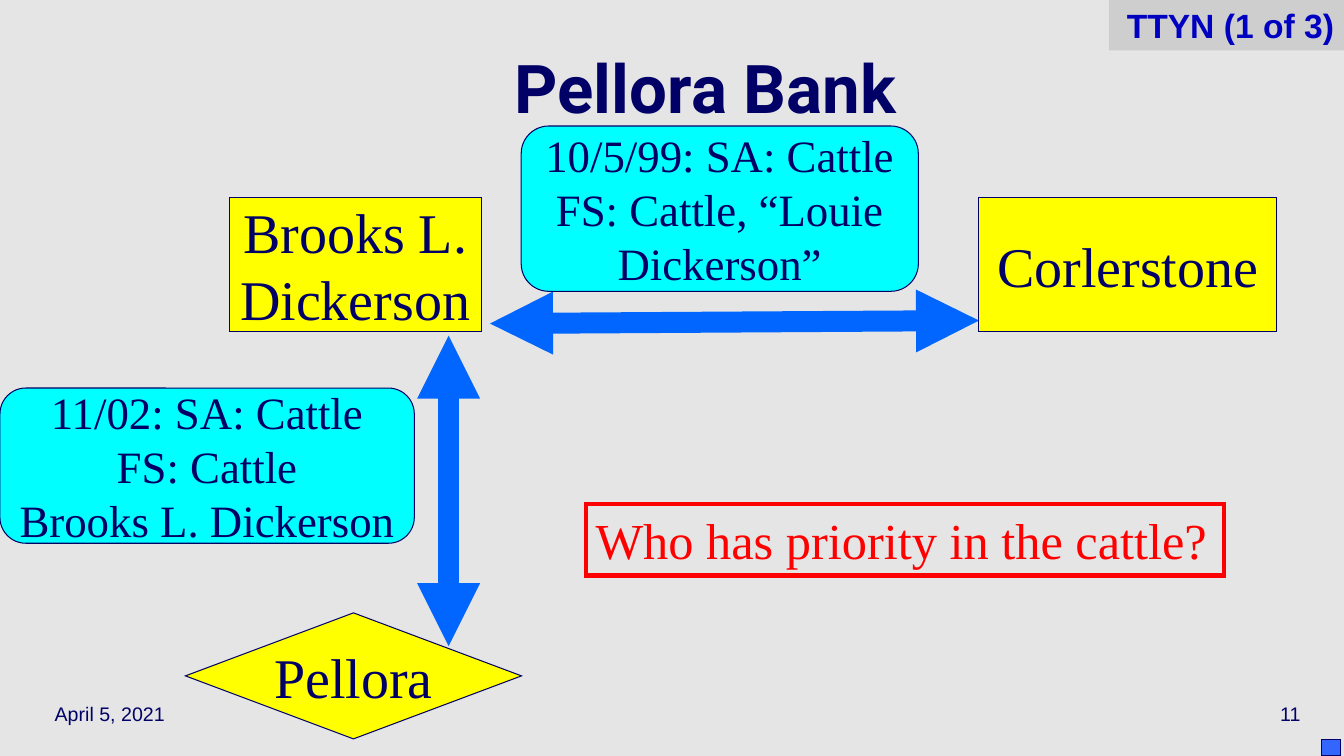
from dataclasses import dataclass

from lxml.etree import SubElement as Sub
from pptx import Presentation
from pptx.dml.color import RGBColor as Rgb
from pptx.enum.shapes import MSO_CONNECTOR as Conn, MSO_SHAPE as Form
from pptx.enum.text import MSO_ANCHOR as Anchor, PP_ALIGN as Align
from pptx.oxml.ns import qn
from pptx.shapes.autoshape import Shape
from pptx.slide import Slide
from pptx.util import Inches, Length, Pt

WIDE, HIGH = 13.33, 7.5
HUES = {
    "back": "E5E5E5", "tag": "CECECE", "navy": "000066", "royal": "0000C0",
    "yellow": "FFFF00", "cyan": "00FFFF", "blue": "0066FF", "mark": "3366FF",
    "red": "FF0000",
}
SERIF, SANS, HEAD = "Times New Roman", "Arial", "Roboto"


@dataclass(frozen=True)
class Area:
    left: float
    top: float
    width: float
    height: float


@dataclass(frozen=True)
class Node:
    form: Form
    area: Area
    fill: str
    text: str
    size: int
    wrap: bool = True


@dataclass(frozen=True)
class Arrow:
    left: float
    top: float
    right: float
    low: float


@dataclass(frozen=True)
class Label:
    area: Area
    text: str
    size: int
    font: str = SANS
    bold: bool = False
    align: Align = Align.LEFT
    wrap: bool = False
    space: float = 1.0


NODES = [
    Node(Form.FLOWCHART_PROCESS, Area(17.05, 26.13, 18.75, 17.78),
         "yellow", "Brooks L. Dickerson", 40),
    Node(Form.FLOWCHART_DECISION, Area(13.8, 81.07, 25, 16.67),
         "yellow", "Pellora", 40, wrap=False),
    Node(Form.FLOWCHART_ALTERNATE_PROCESS, Area(0, 51.33, 30.83, 20.53),
         "cyan", "11/02: SA: Cattle\nFS: Cattle\nBrooks L. Dickerson", 32),
    Node(Form.FLOWCHART_ALTERNATE_PROCESS, Area(38.78, 16.67, 29.55, 21.87),
         "cyan", "10/5/99: SA: Cattle\nFS: Cattle, “Louie Dickerson”", 32),
    Node(Form.FLOWCHART_PROCESS, Area(72.84, 26.13, 22.13, 17.78),
         "yellow", "Corlerstone", 40),
]
ARROWS = [Arrow(33.38, 44.4, 33.38, 85.47), Arrow(36.46, 42.8, 72.84, 42.4)]
LABELS = [
    Label(Area(3.33, 91.1, 20.83, 6.67), "April 5, 2021", 14),
    Label(Area(76.67, 91.1, 20.83, 6.67), "11", 14, align=Align.RIGHT),
    Label(Area(6.67, 4.44, 91.67, 16.67), "Pellora Bank", 48, HEAD,
          bold=True, align=Align.CENTER, wrap=True, space=0.7),
]


def across(share: float) -> Length:
    return Inches(WIDE * share / 100)


def down(share: float) -> Length:
    return Inches(HIGH * share / 100)


def place(area: Area) -> tuple[Length, Length, Length, Length]:
    return across(area.left), down(area.top), across(area.width), down(area.height)


def write(shape: Shape, text: str, *, size: int, font: str = SERIF,
          hue: str = "navy", bold: bool = False, align: Align = Align.CENTER,
          anchor: Anchor = Anchor.MIDDLE, wrap: bool = True,
          space: float = 1.0) -> None:
    frame = shape.text_frame
    frame.text = text
    frame.word_wrap = wrap
    frame.vertical_anchor = anchor
    for para in frame.paragraphs:
        para.alignment = align
        para.line_spacing = space
        for run in para.runs:
            run.font.size = Pt(size)
            run.font.name = font
            run.font.bold = bold
            run.font.color.rgb = Rgb.from_string(HUES[hue])


def draw(slide: Slide, form: Form, area: Area, fill: str = "",
         line: str = "navy", weight: float = 0.75) -> Shape:
    shape = slide.shapes.add_shape(form, *place(area))
    shape.shadow.inherit = False
    if fill:
        shape.fill.solid()
        shape.fill.fore_color.rgb = Rgb.from_string(HUES[fill])
    else:
        shape.fill.background()
    if line:
        shape.line.color.rgb = Rgb.from_string(HUES[line])
        shape.line.width = Pt(weight)
        Sub(shape.line._get_or_add_ln(), qn("a:miter"), lim="800000")
    else:
        shape.line.fill.background()
    return shape


def link(slide: Slide, arrow: Arrow) -> None:
    bar = slide.shapes.add_connector(
        Conn.STRAIGHT, across(arrow.left), down(arrow.top),
        across(arrow.right), down(arrow.low))
    bar.line.color.rgb = Rgb.from_string(HUES["blue"])
    bar.line.width = Pt(15)
    edge = bar.line._get_or_add_ln()
    for end in ("a:headEnd", "a:tailEnd"):
        Sub(edge, qn(end), type="triangle")
    Sub(bar._element.spPr, qn("a:effectLst"))


def main() -> None:
    deck = Presentation()
    deck.slide_width, deck.slide_height = Inches(WIDE), Inches(HIGH)
    slide = deck.slides.add_slide(deck.slide_layouts[6])
    slide.background.fill.solid()
    slide.background.fill.fore_color.rgb = Rgb.from_string(HUES["back"])

    for label in LABELS:
        box = slide.shapes.add_textbox(*place(label.area))
        write(box, label.text, size=label.size, font=label.font,
              bold=label.bold, align=label.align, wrap=label.wrap,
              space=label.space)
    for arrow in ARROWS:
        link(slide, arrow)
    for node in NODES:
        shape = draw(slide, node.form, node.area, node.fill)
        write(shape, node.text, size=node.size, wrap=node.wrap)

    draw(slide, Form.RECTANGLE, Area(98.33, 97.78, 1.42, 2.22), "mark")
    query = draw(slide, Form.RECTANGLE, Area(43.58, 66.67, 47.48, 9.47),
                 line="red", weight=3)
    write(query, "Who has priority in the cattle?", size=36, hue="red",
          align=Align.LEFT, anchor=Anchor.TOP, wrap=False)
    tag = draw(slide, Form.RECTANGLE, Area(82.5, 0, 17.5, 6.67), "tag", line="")
    write(tag, "TTYN (1 of 3)", size=24, font=SANS, hue="royal", bold=True,
          align=Align.RIGHT, anchor=Anchor.TOP)
    deck.save("out.pptx")


if __name__ == "__main__":
    main()
